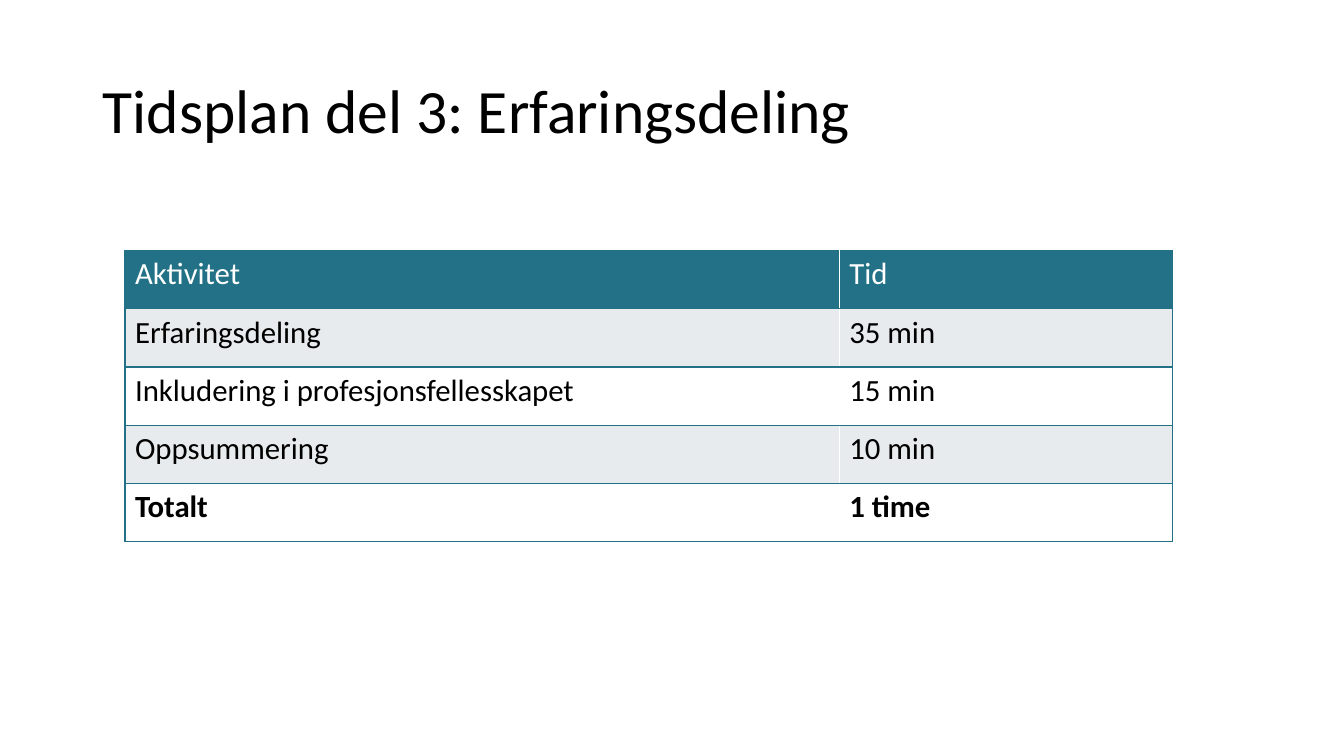
from lxml import etree
from pptx import Presentation
from pptx.dml.color import RGBColor
from pptx.enum import text
from pptx.oxml import ns
from pptx.util import Pt

TEAL = RGBColor(0x22, 0x71, 0x86)
BAND = RGBColor(0xE8, 0xEB, 0xED)
WHITE = RGBColor(0xFF, 0xFF, 0xFF)
BLACK = RGBColor(0, 0, 0)

TITLE = "Tidsplan del 3: Erfaringsdeling"
SCHEDULE = [
    ("Aktivitet", "Tid"),
    ("Erfaringsdeling", "35 min"),
    ("Inkludering i profesjonsfellesskapet", "15 min"),
    ("Oppsummering", "10 min"),
    ("Totalt", "1 time"),
]
COLUMN_WIDTHS = (510.2, 238.2)
ROW_HEIGHT = 41.6


def write(paragraph, words, color, **formats):
    span = paragraph.add_run()
    span.text = words
    span.font.color.rgb = color
    for name, value in {"name": "Calibri", **formats}.items():
        setattr(span.font, name, value)


def place(shape, left, top, width, height):
    lengths = {"left": left, "top": top, "width": width, "height": height}
    for name, value in lengths.items():
        setattr(shape, name, Pt(value))


def add_title(page):
    title = page.shapes.title
    place(title, 66.2, 28.8, 828, 104.4)
    title.text_frame.vertical_anchor = text.MSO_ANCHOR.MIDDLE
    paragraph = title.text_frame.paragraphs[0]
    paragraph.alignment = text.PP_ALIGN.LEFT
    paragraph.line_spacing = 0.9
    write(paragraph, TITLE, BLACK, size=Pt(44))


def add_borders(cell, sides):
    """Draw 1 pt lines; sides come in the order L, R, T, B."""
    properties = cell._tc.get_or_add_tcPr()
    for side in sides:
        line = etree.SubElement(properties, ns.qn(f"a:ln{side}"), w=str(Pt(1)))
        fill = etree.SubElement(line, ns.qn("a:solidFill"))
        etree.SubElement(fill, ns.qn("a:srgbClr"), val=str(TEAL))


def add_schedule(page):
    frame = page.shapes.add_table(
        len(SCHEDULE), len(COLUMN_WIDTHS), Pt(89.3), Pt(179),
        Pt(sum(COLUMN_WIDTHS)), Pt(ROW_HEIGHT * len(SCHEDULE)))
    table = frame.table
    for column, width in zip(table.columns, COLUMN_WIDTHS):
        column.width = Pt(width)
    last = len(SCHEDULE) - 1
    for i, entry in enumerate(SCHEDULE):
        table.rows[i].height = Pt(ROW_HEIGHT)
        background = TEAL if i == 0 else BAND if i % 2 else WHITE
        for j, words in enumerate(entry):
            cell = table.cell(i, j)
            add_borders(cell, ("LTB", "RTB")[j])
            cell.fill.solid()
            cell.fill.fore_color.rgb = background
            write(cell.text_frame.paragraphs[0], words,
                  BLACK if i else WHITE, size=Pt(22), bold=i == last)


def main():
    deck = Presentation()
    deck.slide_width, deck.slide_height = Pt(960), Pt(540)
    page = deck.slides.add_slide(deck.slide_layouts[5])
    add_title(page)
    add_schedule(page)
    deck.save("out.pptx")


if __name__ == "__main__":
    main()
